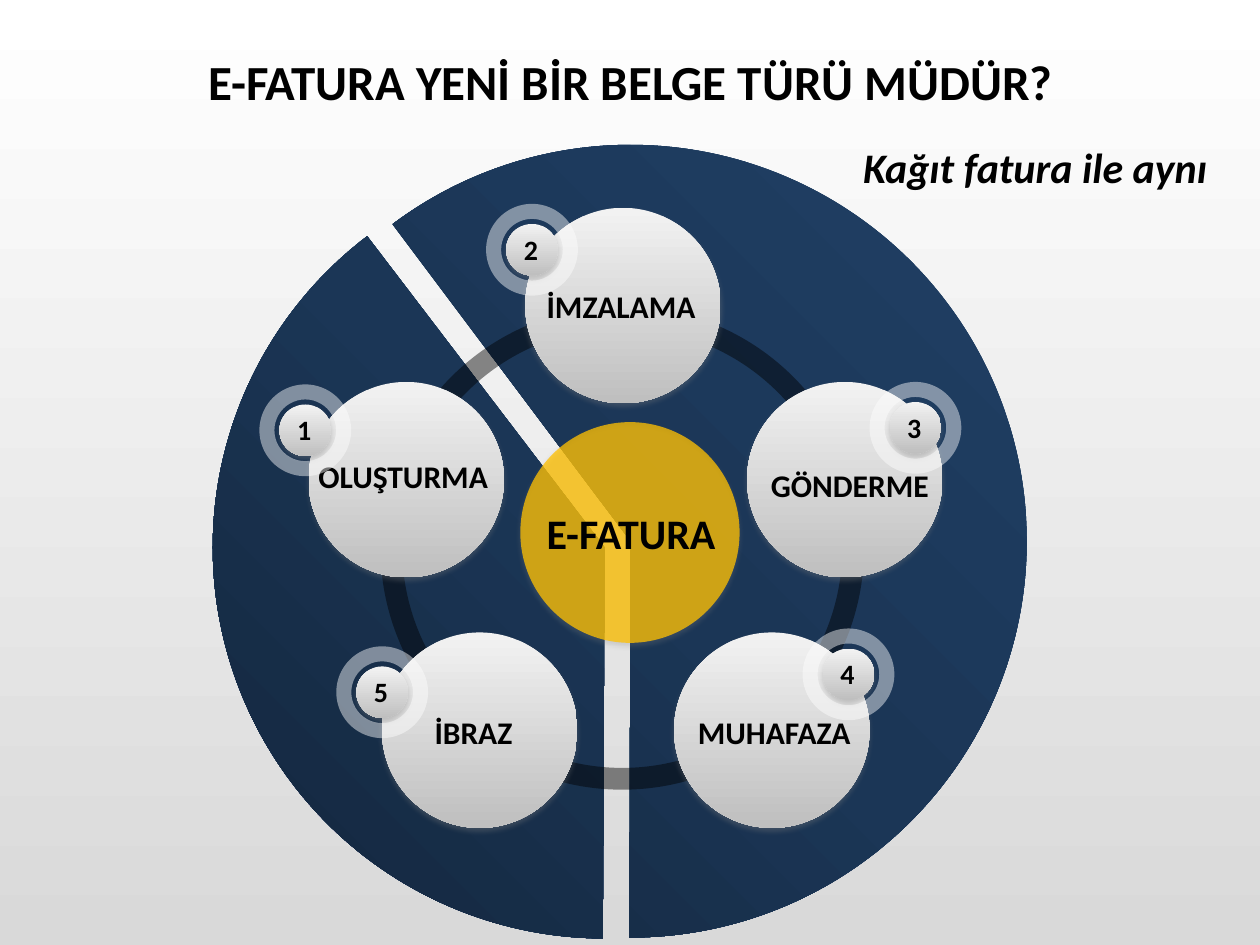
"""Build a slide showing the five stages of an e-invoice around a central disc."""
from dataclasses import dataclass

from lxml.etree import SubElement
from pptx import Presentation
from pptx.dml.color import RGBColor
from pptx.enum.shapes import MSO_SHAPE
from pptx.enum.text import MSO_ANCHOR, MSO_AUTO_SIZE, PP_ALIGN
from pptx.oxml import parse_xml
from pptx.oxml.ns import nsdecls, qn
from pptx.util import Cm, Pt

COLORS = {
    "text": "000000", "ring": "000000", "halo": "FFFFFF", "core": "FFC000",
    "page_top": "FFFFFF", "page_bottom": "D9D9D9",
    "disc_top": "F2F2F2", "disc_bottom": "BFBFBF", "shadow": "808080",
    "navy_dark": "13263C", "navy_mid": "1B3656", "navy_light": "204066",
}
FONT = "Calibri"
DISC, BADGE, HALO = 3.94, 1.04, 1.85


@dataclass
class Box:
    x: float
    y: float
    w: float
    h: float

    def emu(self) -> tuple:
        return Cm(self.x), Cm(self.y), Cm(self.w), Cm(self.h)


@dataclass
class Stage:
    number: int
    name: str
    disc: tuple[float, float]
    label: Box
    halo: tuple[float, float]


STAGES = [
    Stage(2, "İMZALAMA", (10.59, 4.19), Box(10.77, 5.66, 3.53, 1.02), (9.8, 4.11)),
    Stage(1, "OLUŞTURMA", (6.22, 7.7), Box(6.17, 9.09, 3.96, 1.02), (5.23, 7.75)),
    Stage(3, "GÖNDERME", (15.06, 7.7), Box(15.29, 9.27, 3.73, 1.02), (17.53, 7.7)),
    Stage(4, "MUHAFAZA", (13.59, 12.75), Box(13.82, 14.25, 3.63, 1.02), (16.18, 12.67)),
    Stage(5, "İBRAZ", (7.7, 12.75), Box(8.51, 14.25, 2.11, 1.02), (6.78, 13.03)),
]


def add_plain(shapes, kind: MSO_SHAPE, box: Box, adj: tuple = ()):
    sp = shapes.add_shape(kind, *box.emu())
    sp.shadow.inherit = False
    sp.line.fill.background()
    for i, value in enumerate(adj):
        sp.adjustments[i] = value
    return sp


def fill_solid(sp, color: str, alpha: int) -> None:
    sp.fill.solid()
    sp.fill.fore_color.rgb = RGBColor.from_string(COLORS[color])
    clr = sp.fill._xPr.find(qn("a:solidFill"))[0]
    SubElement(clr, qn("a:alpha"), val=str(alpha * 1000))


def fill_vertical(fill, top: str, bottom: str) -> None:
    fill.gradient()
    fill.gradient_angle = 270
    for stop, color, pos in zip(fill.gradient_stops, (top, bottom), (0, 1)):
        stop.color.rgb = RGBColor.from_string(COLORS[color])
        stop.position = pos


def fill_radial(sp, *colors: str) -> None:
    step = 100000 // (len(colors) - 1)
    stops = "".join(
        f'<a:gs pos="{i * step}"><a:srgbClr val="{COLORS[c]}"/></a:gs>'
        for i, c in enumerate(colors))
    grad = parse_xml(
        f'<a:gradFill {nsdecls("a")} rotWithShape="1"><a:gsLst>{stops}</a:gsLst>'
        '<a:path path="circle"><a:fillToRect t="100000" r="100000"/></a:path></a:gradFill>')
    sp._element.spPr.find(qn("a:prstGeom")).addnext(grad)


def add_shadow(sp) -> None:
    effects = sp._element.spPr.find(qn("a:effectLst"))
    shadow = SubElement(effects, qn("a:outerShdw"), blurRad=str(Pt(3.1)),
                        dist=str(Pt(1.8)), dir="5400000", algn="t", rotWithShape="0")
    clr = SubElement(shadow, qn("a:srgbClr"), val=COLORS["shadow"])
    SubElement(clr, qn("a:alpha"), val="35000")


def write(tf, text: str, size: int, align: PP_ALIGN, italic: bool = False) -> None:
    p = tf.paragraphs[0]
    p.alignment = align
    r = p.add_run()
    r.text = text
    r.font.name, r.font.size = FONT, Pt(size)
    r.font.bold, r.font.italic = True, italic
    r.font.color.rgb = RGBColor.from_string(COLORS["text"])


def add_text(shapes, box: Box, text: str, size: int, align: PP_ALIGN = PP_ALIGN.LEFT,
             wrap: bool = False, italic: bool = False) -> None:
    tf = shapes.add_textbox(*box.emu()).text_frame
    tf.word_wrap = wrap
    tf.auto_size = MSO_AUTO_SIZE.SHAPE_TO_FIT_TEXT
    write(tf, text, size, align, italic)


def add_disc(shapes, x: float, y: float, size: float) -> None:
    sp = add_plain(shapes, MSO_SHAPE.OVAL, Box(x, y, size, size))
    fill_vertical(sp.fill, "disc_top", "disc_bottom")
    add_shadow(sp)


def add_ring(shapes, box: Box, thickness: float, color: str) -> None:
    sp = add_plain(shapes, MSO_SHAPE.DONUT, box, (thickness,))
    fill_solid(sp, color, 45)


def add_stage(s, stage: Stage) -> None:
    shapes = s.shapes.add_group_shape().shapes
    x, y = stage.halo
    inset = (HALO - BADGE) / 2
    add_disc(shapes, *stage.disc, DISC)
    add_text(shapes, stage.label, stage.name, 18)
    add_disc(shapes, x + inset, y + inset, BADGE)
    add_ring(shapes, Box(x, y, HALO, HALO), 0.164, "halo")
    add_text(shapes, Box(x + 0.51, y + 0.45, 0.81, 0.94), str(stage.number), 16)


def add_core(s) -> None:
    shapes = s.shapes.add_group_shape().shapes
    sp = add_plain(shapes, MSO_SHAPE.OVAL, Box(10.49, 8.51, 4.42, 4.45))
    fill_solid(sp, "core", 76)
    add_shadow(sp)
    add_text(shapes, Box(10.74, 10.11, 3.96, 1.27), "E-FATURA", 24, PP_ALIGN.CENTER)


def main() -> None:
    prs = Presentation()
    prs.slide_width, prs.slide_height = Cm(25.4), Cm(19.05)
    s = prs.slides.add_slide(prs.slide_layouts[5])
    fill_vertical(s.background.fill, "page_top", "page_bottom")

    title = s.shapes.title
    title.left, title.top, title.width, title.height = Box(3, 0.91, 19.41, 1.45).emu()
    title.text_frame.vertical_anchor = MSO_ANCHOR.TOP
    write(title.text_frame, "E-FATURA YENİ BİR BELGE TÜRÜ MÜDÜR?", 28, PP_ALIGN.CENTER)

    for box, angles in ((Box(4.72, 2.92, 15.98, 15.98), (139.87, 54.08)),
                        (Box(4.29, 3.15, 15.8, 15.77), (54.16, 139.59))):
        sp = add_plain(s.shapes, MSO_SHAPE.PIE, box, angles)
        fill_radial(sp, "navy_dark", "navy_mid", "navy_light")
    add_ring(s.shapes, Box(7.67, 6.17, 9.75, 9.75), 0.045, "ring")
    for stage in STAGES:
        add_stage(s, stage)
    add_text(s.shapes, Box(16.69, 2.72, 8.36, 2.13), "Kağıt fatura ile aynı", 24,
             PP_ALIGN.CENTER, wrap=True, italic=True)
    add_core(s)
    prs.save("out.pptx")


if __name__ == "__main__":
    main()
